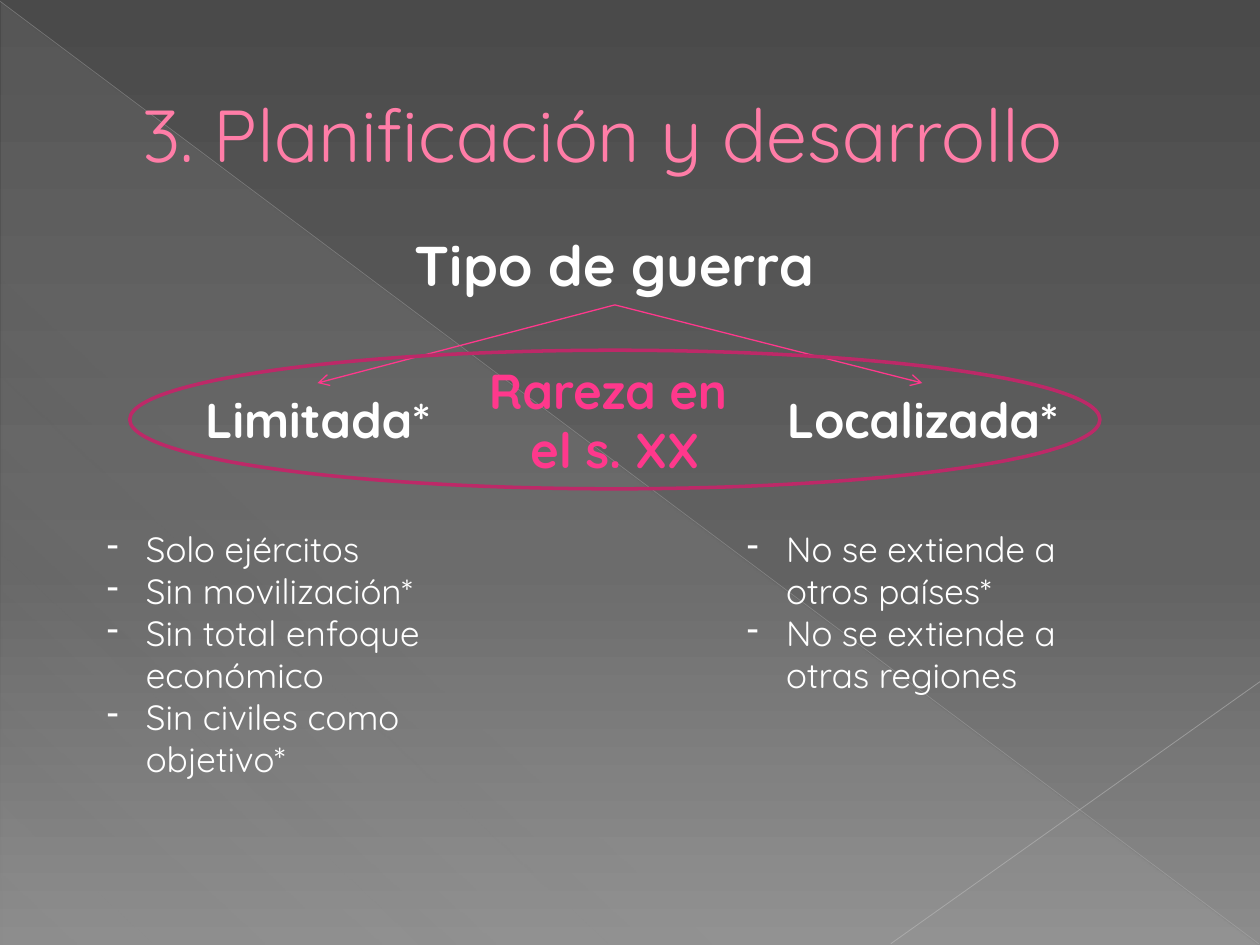
from lxml import etree
from pptx import Presentation
from pptx import util as u
from pptx.dml.color import RGBColor
from pptx.enum import shapes, text
from pptx.oxml.ns import qn

COLORS = {
    "white": "FFFFFF", "title": "FF7DA7", "title_edge": "B12761",
    "pink": "FF388C", "oval": "BD2968", "veil": "D2D2D2",
    "diagonal": "BFBFBF", "corner": "C6C6C6",
    "top": "4A4A4A", "middle": "626262", "bottom": "8C8C8C",
}
FONT = "Quicksand"
HANGING = 0.31


def add_node(parent, tag, **attributes):
    return etree.SubElement(parent, qn(tag), {k: str(v) for k, v in attributes.items()})


class SlideBuilder:
    def __init__(self, presentation):
        self.slide = presentation.slides.add_slide(presentation.slide_layouts[6])

    def color(self, name):
        return RGBColor.from_string(COLORS[name])

    def gradient(self, owner, stops, angle):
        """Swap the solid fill in owner for a gradient of (position, colour, opacity)."""
        solid = owner.find(qn("a:solidFill"))
        gradient = etree.Element(qn("a:gradFill"), rotWithShape="1")
        stop_list = add_node(gradient, "a:gsLst")
        for position, name, opacity in stops:
            stop = add_node(stop_list, "a:gs", pos=position * 1000)
            color = add_node(stop, "a:srgbClr", val=COLORS[name])
            if opacity < 100:
                add_node(color, "a:alpha", val=opacity * 1000)
        add_node(gradient, "a:lin", ang=angle * 60000, scaled=0)
        owner.replace(solid, gradient)

    def background(self, stops, angle):
        self.slide.background.fill.solid()
        self.gradient(self.slide.element.find(".//" + qn("p:bgPr")), stops, angle)

    def shape(self, kind, box, line=None, width=0, stops=None, angle=0):
        shape = self.slide.shapes.add_shape(kind, *map(u.Inches, box))
        shape.shadow.inherit = False
        if stops:
            shape.fill.solid()
            self.gradient(shape.element.spPr, stops, angle)
        else:
            shape.fill.background()
        if line:
            shape.line.color.rgb = self.color(line)
            shape.line.width = u.Pt(width)
        else:
            shape.line.fill.background()
        return shape

    def line(self, start, end, color, width, opacity=100):
        connector = self.slide.shapes.add_connector(
            shapes.MSO_CONNECTOR.STRAIGHT, *map(u.Inches, (*start, *end)))
        connector.line.color.rgb = self.color(color)
        connector.line.width = u.Pt(width)
        properties = connector.element.spPr
        if opacity < 100:
            add_node(properties.find(".//" + qn("a:srgbClr")), "a:alpha", val=opacity * 1000)
        add_node(properties, "a:effectLst")
        return connector

    def arrow(self, source, target):
        """Arrow from the bottom of source to the top of target."""
        connector = self.line((0, 0), (1, 1), "pink", 0.75)
        connector.begin_connect(source, 2)
        connector.end_connect(target, 0)
        add_node(connector.line._get_or_add_ln(), "a:tailEnd", type="arrow")

    def text(self, box, lines, size, color="white", bold=False, centered=True,
             middle=False, indent=0, dashes=False, edge=None):
        shape = self.slide.shapes.add_textbox(*map(u.Inches, box))
        frame = shape.text_frame
        frame.word_wrap = True
        frame.vertical_anchor = text.MSO_ANCHOR.MIDDLE if middle else text.MSO_ANCHOR.TOP
        for number, words in enumerate(lines):
            paragraph = frame.add_paragraph() if number else frame.paragraphs[0]
            paragraph.alignment = text.PP_ALIGN.CENTER if centered else text.PP_ALIGN.LEFT
            properties = paragraph._p.get_or_add_pPr()
            properties.set("marL", str(u.Inches(indent)))
            if dashes:
                properties.set("indent", str(-u.Inches(indent)))
                add_node(properties, "a:buFontTx")
                add_node(properties, "a:buChar", char="-")
            run = paragraph.add_run()
            run.text = words
            run.font.name = FONT
            run.font.size = u.Pt(size)
            run.font.bold = bold
            run.font.color.rgb = self.color(color)
            if edge:
                outline = etree.Element(qn("a:ln"), w=str(u.Pt(0.5)))
                add_node(add_node(outline, "a:solidFill"), "a:srgbClr", val=COLORS[edge])
                run._r.get_or_add_rPr().insert(0, outline)
        return shape

    def dash_list(self, box, items):
        return self.text(box, items, 20, centered=False, indent=HANGING, dashes=True)


def main():
    presentation = Presentation()
    presentation.slide_width = u.Inches(10)
    presentation.slide_height = u.Inches(7.5)
    builder = SlideBuilder(presentation)

    # Backdrop
    builder.background([(0, "top", 100), (60, "middle", 100), (100, "bottom", 100)], 90)
    builder.shape(shapes.MSO_SHAPE.RIGHT_TRIANGLE, (0.01, 0.02, 9.98, 7.48),
                  stops=[(0, "veil", 10), (70, "veil", 8), (100, "veil", 1)], angle=133)
    builder.line((0, 0.01), (9.99, 7.49), "diagonal", 0.39, 35)
    builder.line((10, 5.41), (7.07, 7.49), "corner", 0.47, 45)

    # Title and headings
    builder.text((0.5, 0.29, 9, 1.53), ["3. Planificación y desarrollo"], 42, "title",
                 centered=False, middle=True, indent=0.53, edge="title_edge")
    war_type = builder.text((1.85, 1.78, 6.06, 0.64), ["Tipo de guerra"], 32,
                            bold=True, middle=True)
    branches = [builder.text((left, 3.04, 2.44, 0.57), [name], 28, bold=True)
                for left, name in ((1.3, "Limitada*"), (6.1, "Localizada*"))]
    for branch in branches:
        builder.arrow(war_type, branch)

    # Features of each type
    builder.dash_list((0.75, 4.14, 3.54, 2.12), [
        "Solo ejércitos", "Sin movilización*", "Sin total enfoque económico",
        "Sin civiles como objetivo*"])
    builder.dash_list((5.83, 4.14, 2.99, 1.45), [
        "No se extiende a otros países*", "No se extiende a otras regiones"])

    # Oval with its remark
    builder.shape(shapes.MSO_SHAPE.OVAL, (1.03, 2.78, 7.7, 1.1), line="oval", width=2)
    builder.text((1.71, 2.81, 6.34, 1.04), ["Rareza en ", "el s. XX"], 28, "pink", bold=True)

    presentation.save("out.pptx")


if __name__ == "__main__":
    main()
